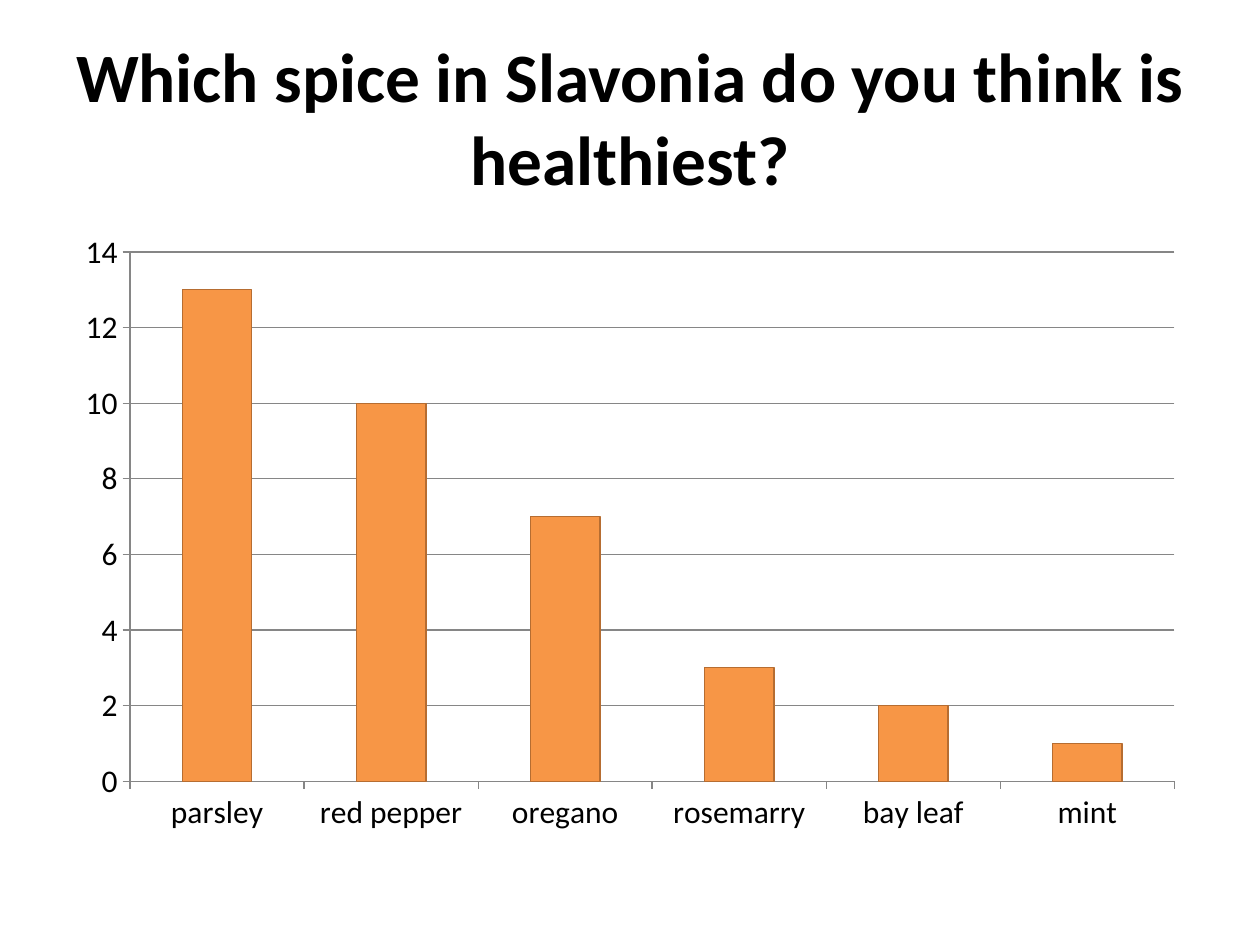
from dataclasses import dataclass

from pptx import Presentation
from pptx.chart.data import CategoryChartData
from pptx.dml.color import RGBColor as Rgb
from pptx.enum.chart import XL_CHART_TYPE as ChartType, XL_TICK_MARK as Tick
from pptx.enum.text import MSO_ANCHOR as Anchor, PP_ALIGN as Align
from pptx.util import Inches, Pt


@dataclass(frozen=True)
class Theme:
    """Colours, typeface and type sizes of the slide."""
    ink: Rgb = Rgb.from_string("000000")
    bar: Rgb = Rgb.from_string("F79646")
    bar_edge: Rgb = Rgb.from_string("B66D31")
    rule: Rgb = Rgb.from_string("868686")
    face: str = "Calibri"
    title_size: Pt = Pt(39.6)
    chart_size: Pt = Pt(18)


THEME = Theme()
VOTES = {"parsley": 13, "red pepper": 10, "oregano": 7,
         "rosemarry": 3, "bay leaf": 2, "mint": 1}


def apply(target, values):
    """Set every attribute in values on target."""
    for name, value in values.items():
        setattr(target, name, value)


def style_font(font, size, bold=False):
    """Give a font the theme's face and ink."""
    apply(font, {"name": THEME.face, "size": size, "bold": bold})
    font.color.rgb = THEME.ink


def style_line(line, color):
    """Draw a thin line in the given colour."""
    line.color.rgb = color
    line.width = Pt(0.75)


def place_title(page, box, text):
    """Fill the title placeholder and fit it to the box."""
    title = page.shapes.title
    apply(title, dict(zip(("left", "top", "width", "height"), box)))
    frame = title.text_frame
    apply(frame, {"word_wrap": True, "vertical_anchor": Anchor.MIDDLE})
    para = frame.paragraphs[0]
    para.alignment = Align.CENTER
    span = para.add_run()
    span.text = text
    style_font(span.font, THEME.title_size, bold=True)


def place_chart(page, box, votes):
    """Draw the votes as a column chart in the box."""
    data = CategoryChartData()
    data.categories = list(votes)
    data.add_series("Series 1", list(votes.values()))
    chart = page.shapes.add_chart(ChartType.COLUMN_CLUSTERED, *box, data).chart
    apply(chart, {"has_legend": False, "has_title": False})
    style_font(chart.font, THEME.chart_size)

    plot = chart.plots[0]
    apply(plot, {"gap_width": 150, "vary_by_categories": False})
    bars = plot.series[0].format
    bars.fill.solid()
    bars.fill.fore_color.rgb = THEME.bar
    style_line(bars.line, THEME.bar_edge)

    for axis in (chart.category_axis, chart.value_axis):
        apply(axis, {"major_tick_mark": Tick.OUTSIDE,
                     "minor_tick_mark": Tick.NONE})
        style_line(axis.format.line, THEME.rule)
    apply(chart.value_axis, {"minimum_scale": 0, "maximum_scale": 14,
                             "major_unit": 2, "has_major_gridlines": True})
    style_line(chart.value_axis.major_gridlines.format.line, THEME.rule)


def main():
    """Build and save the slide."""
    deck = Presentation()
    apply(deck, {"slide_width": Inches(10), "slide_height": Inches(7.5)})
    page = deck.slides.add_slide(deck.slide_layouts[5])
    left, width = Inches(0.5), Inches(9)
    place_title(page, (left, Inches(0.3), width, Inches(1.25)),
                "Which spice in Slavonia do you think is healthiest?")
    place_chart(page, (left, Inches(1.75), width, Inches(4.95)), VOTES)
    deck.save("out.pptx")


if __name__ == "__main__":
    main()
